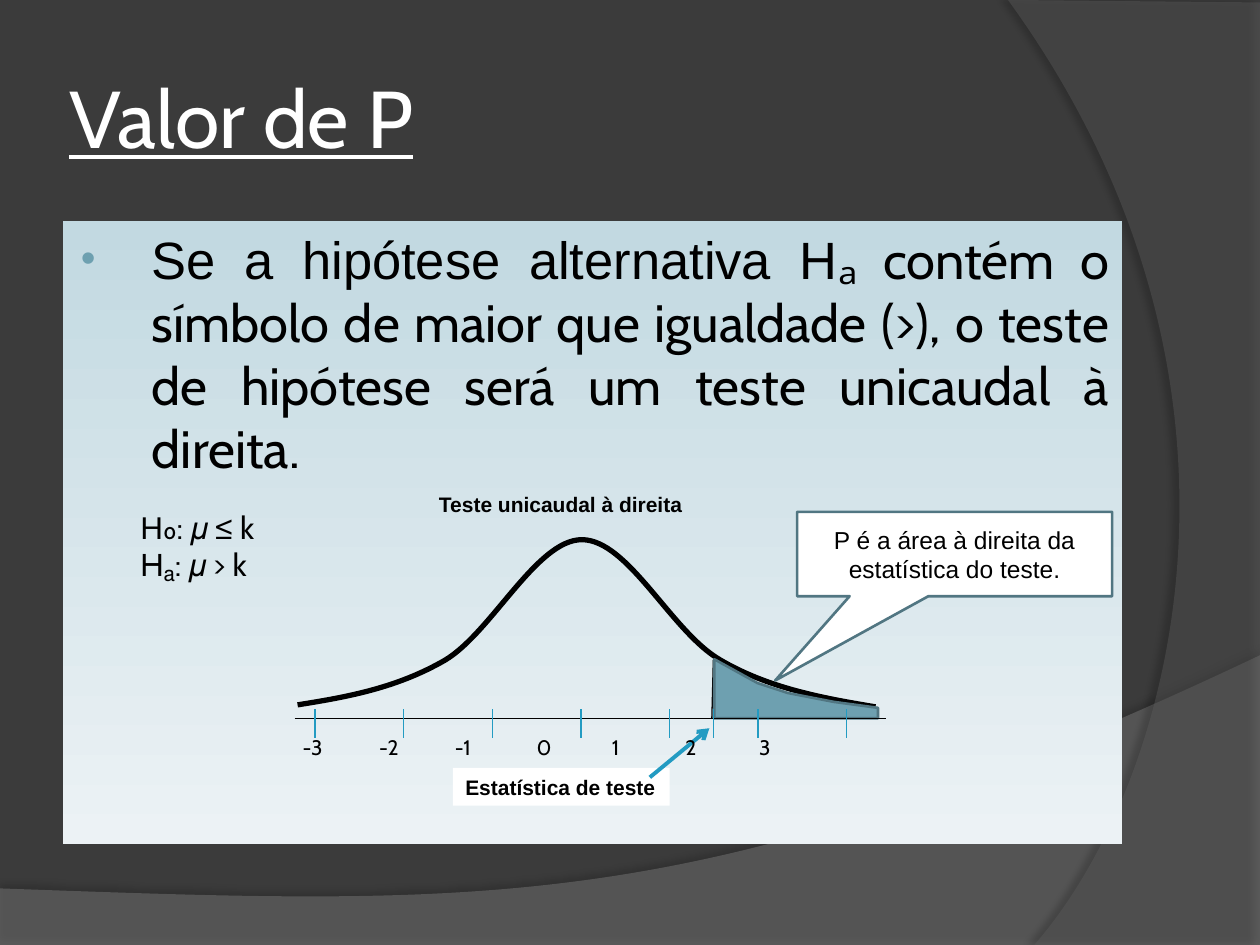
import pptx
import pptx.dml.color
import pptx.enum.shapes
import pptx.enum.text
import pptx.oxml
import pptx.oxml.ns
import pptx.util
from pptx.util import Cm

NS = 'xmlns:a="http://schemas.openxmlformats.org/drawingml/2006/main"'
ALIGN = pptx.enum.text.PP_ALIGN
ANCHOR = pptx.enum.text.MSO_ANCHOR
BLACK, WHITE, TEAL, DARK_TEAL, TICK_BLUE = "000000", "FFFFFF", "6EA0B0", "517682", "239BC2"
AXIS_Y = 14.48


def color(hex_value):
    return pptx.dml.color.RGBColor.from_string(hex_value)


def xml(markup):
    return pptx.oxml.parse_xml(markup.replace("NS", NS, 1))


def paint(shape, fill=None, line=None, width=1.5):
    shape.shadow.inherit = False
    if fill:
        shape.fill.solid()
        shape.fill.fore_color.rgb = color(fill)
    else:
        shape.fill.background()
    if line:
        shape.line.color.rgb = color(line)
        shape.line.width = pptx.util.Pt(width)
    else:
        shape.line.fill.background()


def add_run(paragraph, text, size, font="Arial", hex_value=BLACK, bold=None, underline=None):
    run = paragraph.add_run()
    run.text = text
    run.font.size = pptx.util.Pt(size)
    run.font.name = font
    run.font.color.rgb = color(hex_value)
    run.font.bold = bold
    run.font.underline = underline


def add_text(slide, left, top, width, height, wrap=False):
    box = slide.shapes.add_textbox(Cm(left), Cm(top), Cm(width), Cm(height))
    box.text_frame.word_wrap = wrap
    return box


def add_line(slide, start, end, hex_value, width=0.75, arrow=False):
    line = slide.shapes.add_connector(
        pptx.enum.shapes.MSO_CONNECTOR.STRAIGHT, *map(Cm, start + end))
    line.line.color.rgb = color(hex_value)
    line.line.width = pptx.util.Pt(width)
    properties = line._element.spPr
    if arrow:
        properties.find(pptx.oxml.ns.qn("a:ln")).append(xml('<a:tailEnd NS type="arrow"/>'))
    properties.append(xml("<a:effectLst NS/>"))


def add_outline(slide, start, segments, close=True):
    """Each segment is [end] for a straight part or [control, control, end] for a curve."""
    builder = slide.shapes.build_freeform(Cm(start[0]), Cm(start[1]))
    builder.add_line_segments([tuple(map(Cm, part[-1])) for part in segments], close=close)
    outline = builder.convert_to_shape()
    straight_parts = outline._element.findall(".//" + pptx.oxml.ns.qn("a:lnTo"))
    for straight, part in zip(straight_parts, segments):
        if len(part) == 3:
            points = "".join(f'<a:pt x="{Cm(x) - outline.left}" y="{Cm(y) - outline.top}"/>'
                             for x, y in part)
            straight.getparent().replace(
                straight, xml(f"<a:cubicBezTo NS>{points}</a:cubicBezTo>"))
    return outline


def add_backdrop(slide, start, segments, fill, opacity, shadow_opacity, distance, direction):
    swoosh = add_outline(slide, start, segments)
    paint(swoosh, fill)
    properties = swoosh._element.spPr
    properties.find(".//" + pptx.oxml.ns.qn("a:srgbClr")).append(
        xml(f'<a:alpha NS val="{opacity * 1000}"/>'))
    properties.find(pptx.oxml.ns.qn("a:effectLst")).append(xml(
        f'<a:outerShdw NS blurRad="{pptx.util.Pt(4)}" dist="{pptx.util.Pt(distance)}"'
        f' dir="{direction * 60000}" algn="ctr" rotWithShape="0"><a:srgbClr val="000000">'
        f'<a:alpha val="{shadow_opacity * 1000}"/></a:srgbClr></a:outerShdw>'))


def add_background(slide):
    slide.background.fill.solid()
    slide.background.fill.fore_color.rgb = color("3B3B3B")
    wave = [[(0, 19.05)], [(25.4, 19.05)], [(25.4, 13.21)],
            [(14.2, 18.52), (9.93, 18.26), (0, 17.91)]]
    add_backdrop(slide, (0, 17.91), wave, "7F7F7F", 45, 35, 3.5, 270)
    arc = [[(25.4, 19.05)], [(20.85, 19.05)],
           [(23.75, 15.72), (25.86, 7.62), (20.32, 0)], [(25.4, 0.05)]]
    add_backdrop(slide, (25.4, 0.05), arc, "5E5E5E", 40, 45, 4, 180)


def format_title(slide):
    title = slide.shapes.title
    title.left, title.top, title.width, title.height = map(Cm, (1.27, 0.76, 20.75, 3.18))
    frame = title.text_frame
    frame.margin_left = frame.margin_right = frame.margin_top = frame.margin_bottom = Cm(0.13)
    frame.vertical_anchor = ANCHOR.MIDDLE
    frame.paragraphs[0].alignment = ALIGN.LEFT
    add_run(frame.paragraphs[0], "Valor de P", 46, "Cabin", WHITE, underline=True)


def add_panel(slide):
    panel = add_text(slide, 1.27, 4.45, 21.35, 12.57, wrap=True)
    panel.fill.gradient()
    panel.fill.gradient_angle = 270
    for stop, hex_value in zip(panel.fill.gradient_stops, ("C2D9E1", "ECF2F5")):
        stop.color.rgb = color(hex_value)
    statement = panel.text_frame.paragraphs[0]
    statement.alignment = ALIGN.JUSTIFY
    bullet = statement._p.get_or_add_pPr()
    bullet.set("marL", str(Cm(1.54)))
    bullet.set("indent", str(-Cm(1.43)))
    for part in ('<a:spcBef NS><a:spcPct val="20000"/></a:spcBef>',
                 f'<a:buClr NS><a:srgbClr val="{TEAL}"/></a:buClr>',
                 '<a:buSzPct NS val="80000"/>', '<a:buFont NS typeface="Arial"/>',
                 '<a:buChar NS char="•"/>'):
        bullet.append(xml(part))
    add_run(statement, "Se a hipótese alternativa H", 30)
    add_run(statement, "ₐ contém o símbolo de maior que igualdade (>), o teste de "
            "hipótese será um teste unicaudal à direita.", 30, "Cabin")


def add_hypotheses(slide):
    frame = add_text(slide, 2.58, 10.11, 6.15, 1.8, wrap=True).text_frame
    add_run(frame.paragraphs[0], "H", 18)
    add_run(frame.paragraphs[0], "₀: 𝜇 ≤ k", 18, "Cabin")
    add_run(frame.add_paragraph(), "Hₐ: 𝜇 > k", 18, "Cabin")


def add_curve(slide):
    add_line(slide, (14.35, AXIS_Y), (14.38, 13.31), BLACK)
    bell = [[(7.01, 14.05), (8, 13.87), (8.97, 13.31)],
            [(9.91, 12.75), (10.82, 10.88), (11.73, 10.88)],
            [(12.67, 10.88), (13.54, 12.75), (14.53, 13.31)],
            [(15.49, 13.87), (16.56, 14.07), (17.65, 14.25)]]
    paint(add_outline(slide, (6, 14.21), bell, close=False), line=BLACK, width=3)


def add_callout(slide):
    callout = slide.shapes.add_shape(
        pptx.enum.shapes.MSO_SHAPE.RECTANGULAR_CALLOUT, *map(Cm, (16.07, 10.32, 6.35, 1.7)))
    callout.adjustments[0], callout.adjustments[1] = -0.57, 1.5
    paint(callout, WHITE, DARK_TEAL)
    callout.text_frame.word_wrap = True
    callout.text_frame.vertical_anchor = ANCHOR.MIDDLE
    note = callout.text_frame.paragraphs[0]
    note.alignment = ALIGN.CENTER
    add_run(note, "P é a área à direita da estatística do teste.", 14)


def add_p_area(slide):
    area = [(14.4, AXIS_Y), (17.7, AXIS_Y), (17.7, 14.27),
            (16.81, 14.15), (15.88, 13.97), (15.27, 13.77)]
    paint(add_outline(slide, (14.4, 13.29), [[point] for point in area]), TEAL, DARK_TEAL)


def add_axis(slide):
    add_line(slide, (5.94, AXIS_Y), (17.86, AXIS_Y), BLACK)
    first, last = 6.35, 17.07
    ticks = [first + (last - first) * i / 6 for i in range(7)]
    for x in ticks + [14.38]:
        add_line(slide, (x, 14.3), (x, 14.88), TICK_BLUE)
    # Scale values centred on tab stops
    scale = add_text(slide, 5.77, 14.68, 11.91, 0.76).text_frame
    scale.margin_left = Cm(0.33)
    values = scale.paragraphs[0]
    stops = "".join(f'<a:tab pos="{Cm(x)}" algn="ctr"/>'
                    for x in (1.74, 3.23, 4.87, 6.31, 7.83, 9.32))
    values._p.get_or_add_pPr().append(xml(f"<a:tabLst NS>{stops}</a:tabLst>"))
    add_run(values, "\t".join(str(n) for n in range(-3, 4)), 12, "Cabin")


def add_chart_labels(slide):
    heading = add_text(slide, 8.6, 9.78, 5.46, 0.76)
    add_run(heading.text_frame.paragraphs[0], "Teste unicaudal à direita", 12, bold=True)
    statistic = add_text(slide, 9.13, 15.48, 4.37, 0.76)
    paint(statistic, WHITE)
    add_run(statistic.text_frame.paragraphs[0], "Estatística de teste", 12, bold=True)
    add_line(slide, (13.1, 15.67), (14.3, 14.68), TICK_BLUE, 2.25, arrow=True)


def main():
    deck = pptx.Presentation()
    deck.slide_width, deck.slide_height = Cm(25.4), Cm(19.05)
    slide = deck.slides.add_slide(deck.slide_layouts[5])
    add_background(slide)
    format_title(slide)
    add_panel(slide)
    # Right-tailed test diagram
    add_curve(slide)
    add_hypotheses(slide)
    add_chart_labels(slide)
    add_callout(slide)
    add_p_area(slide)
    add_axis(slide)
    deck.save("out.pptx")


if __name__ == "__main__":
    main()
